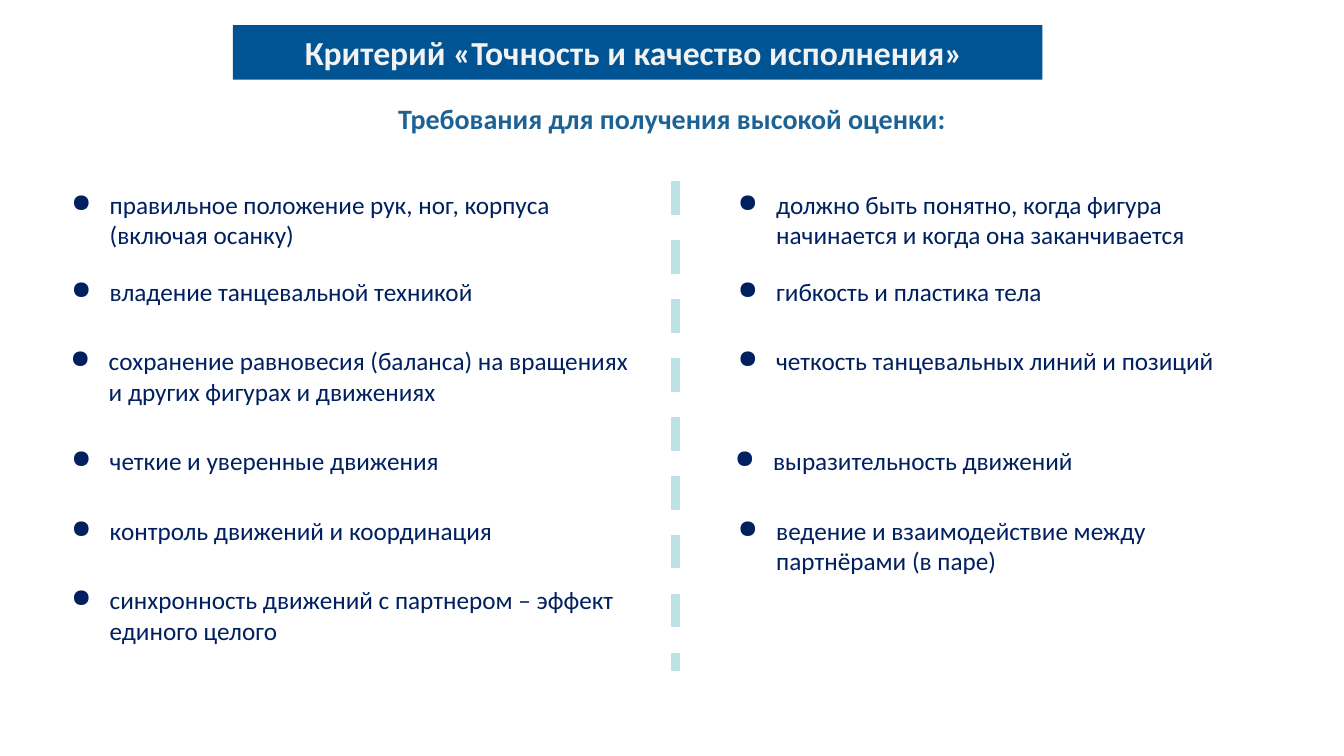
import pptx
import pptx.util
import pptx.dml.color
import pptx.enum.dml
import pptx.enum.shapes
import pptx.enum.text
import pptx.oxml
import pptx.oxml.ns

Inches, Pt = pptx.util.Inches, pptx.util.Pt
RGB = pptx.dml.color.RGBColor.from_string
ALIGN = pptx.enum.text.PP_ALIGN

COLORS = {"banner": "005493", "banner_text": "F2F2F2", "subtitle": "1D6294",
          "body": "002060", "divider": "BCE2E6"}

# Grid: left edge of each column, top of each row, box height by line count
COLUMNS = [0.61, 7.22]
ROWS = [1.83, 2.69, 3.38, 4.37, 5.06, 5.75]
HEIGHTS = {1: 0.4, 2: 0.71}

# column, row, lines, width, shift from the column edge, wording
REQUIREMENTS = [
    (0, 0, 2, 5.88, 0, "правильное положение рук, ног, корпуса (включая осанку)"),
    (0, 1, 1, 4.99, 0, "владение танцевальной техникой"),
    (0, 2, 2, 5.89, -0.01, "сохранение равновесия (баланса) на вращениях и других фигурах и движениях"),
    (0, 3, 1, 5.18, 0, "четкие и уверенные движения"),
    (0, 4, 1, 4.99, 0, "контроль движений и координация"),
    (0, 5, 2, 5.72, 0, "синхронность движений с партнером – эффект единого целого"),
    (1, 0, 2, 4.82, 0, "должно быть понятно, когда фигура начинается и когда она заканчивается"),
    (1, 1, 1, 3.71, 0, "гибкость и пластика тела"),
    (1, 2, 1, 5.11, 0, "четкость танцевальных линий и позиций"),
    (1, 3, 1, 4.33, -0.03, "выразительность движений"),
    (1, 4, 2, 4.82, 0, "ведение и взаимодействие между партнёрами (в паре)"),
]


def write(shape, wording, size, color, align, bold=False):
    """Fill the shape with one formatted paragraph and return the paragraph."""
    shape.text_frame.word_wrap = True
    paragraph = shape.text_frame.paragraphs[0]
    paragraph.alignment = align
    run = paragraph.add_run()
    run.text = wording
    for name, value in {"name": "Calibri", "size": Pt(size), "bold": bold}.items():
        setattr(run.font, name, value)
    run.font.color.rgb = RGB(COLORS[color])
    return paragraph


def add_text(left, top, width, height, *text_format):
    """Add a text box that grows with its text and return its paragraph."""
    box = slide.shapes.add_textbox(*map(Inches, (left, top, width, height)))
    paragraph = write(box, *text_format)
    paragraph.space_after = Pt(6)
    box.text_frame.auto_size = pptx.enum.text.MSO_AUTO_SIZE.SHAPE_TO_FIT_TEXT
    return paragraph


presentation = pptx.Presentation()
presentation.slide_width, presentation.slide_height = Inches(13.33), Inches(7.5)
slide = presentation.slides.add_slide(presentation.slide_layouts[6])

banner = slide.shapes.add_shape(pptx.enum.shapes.MSO_SHAPE.RECTANGLE,
                                *map(Inches, (2.31, 0.25, 8.03, 0.54)))
banner.shadow.inherit = False
banner.fill.solid()
banner.fill.fore_color.rgb = RGB(COLORS["banner"])
banner.line.fill.background()
banner.text_frame.vertical_anchor = pptx.enum.text.MSO_ANCHOR.MIDDLE
write(banner, "Критерий «Точность и качество исполнения» ", 24, "banner_text",
      ALIGN.CENTER, True)

add_text(3.56, 0.96, 6.21, 0.44, "Требования для получения высокой оценки:", 20,
         "subtitle", ALIGN.CENTER, True)

for column, row, lines, width, shift, wording in REQUIREMENTS:
    align = ALIGN.JUSTIFY if lines == 1 else ALIGN.LEFT
    requirement = add_text(COLUMNS[column] + shift, ROWS[row], width, HEIGHTS[lines],
                           wording, 18, "body", align)
    properties = requirement._p.get_or_add_pPr()
    properties.set("marL", str(Inches(0.38)))
    properties.set("indent", str(-Inches(0.38)))
    bullet = pptx.oxml.parse_xml(
        f'<a:buChar {pptx.oxml.ns.nsdecls("a")} char="●"/>')
    properties.append(bullet)

divider = slide.shapes.add_connector(pptx.enum.shapes.MSO_CONNECTOR.STRAIGHT,
                                     *map(Inches, (6.7, 1.8, 6.7, 6.66)))
divider.line.color.rgb = RGB(COLORS["divider"])
divider.line.width = Pt(6)
divider.line.dash_style = pptx.enum.dml.MSO_LINE.DASH
divider._element.spPr.append(
    pptx.oxml.parse_xml(f'<a:effectLst {pptx.oxml.ns.nsdecls("a")}/>'))

presentation.save("out.pptx")
